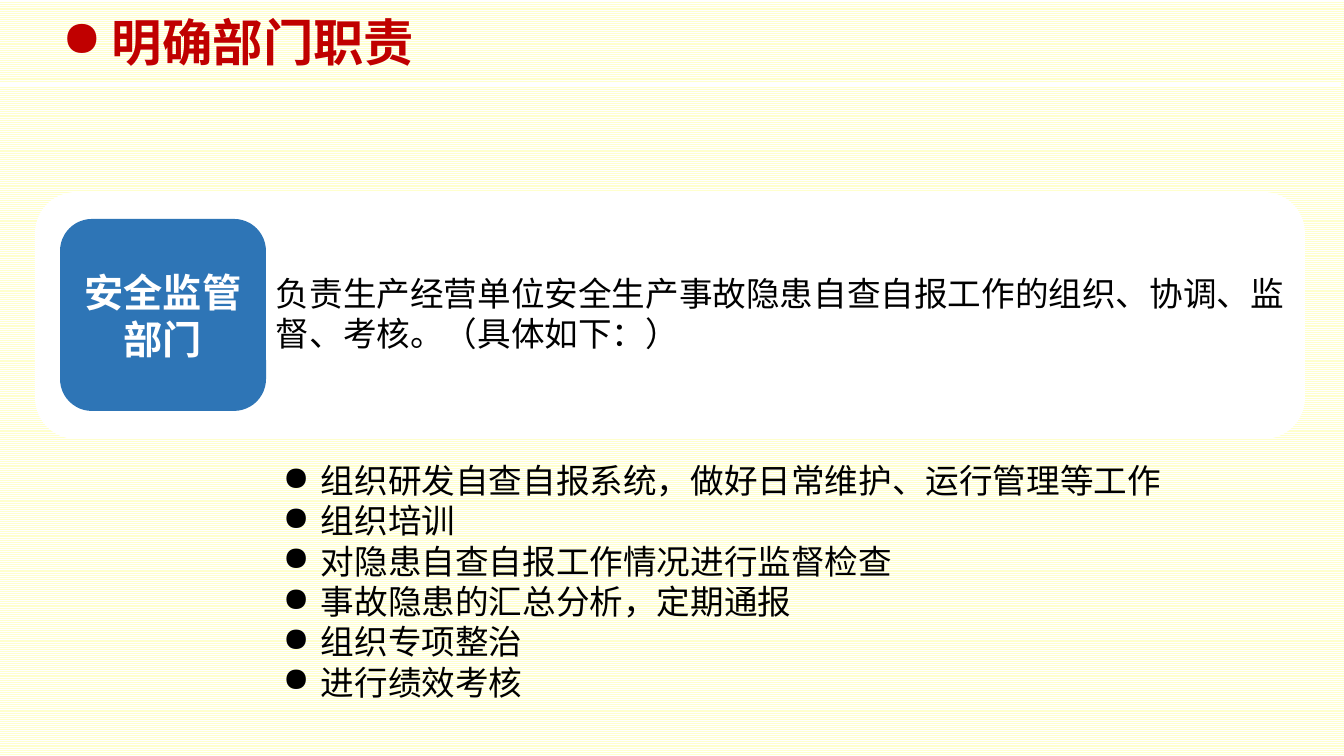
import pptx
import pptx.dml.color
import pptx.enum.dml
import pptx.enum.shapes
import pptx.enum.text
import pptx.oxml.ns
import pptx.util
from lxml import etree

PX = 914400 / 100.8
FONT = "Noto Sans CJK SC"
COLORS = {
    "stripe": "FFFFCC",
    "white": "FFFFFF",
    "heading": "C00000",
    "department": "2E75B6",
    "body": "000000",
}


def color(key):
    return pptx.dml.color.RGBColor.from_string(COLORS[key])


def write(shape, lines, size, color_key, bold=False, hang=0):
    """Fill a shape with paragraphs; a hang in px gives them round bullets."""
    frame = shape.text_frame
    frame.word_wrap = True
    frame.text = "\n".join(lines)
    for paragraph in frame.paragraphs:
        if hang:
            properties = paragraph._p.get_or_add_pPr()
            properties.set("marL", str(round(hang * PX)))
            properties.set("indent", str(round(-hang * PX)))
            bullet = etree.SubElement(properties, pptx.oxml.ns.qn("a:buChar"))
            bullet.set("char", "●")
        run = paragraph.runs[0]
        run.font.size = pptx.util.Pt(size)
        run.font.bold = bold
        run.font.color.rgb = color(color_key)
        run.font.name = FONT
        east_asian = etree.SubElement(run._r.rPr, pptx.oxml.ns.qn("a:ea"))
        east_asian.set("typeface", FONT)


presentation = pptx.Presentation()
presentation.slide_width = round(1344 * PX)
presentation.slide_height = round(756 * PX)
slide = presentation.slides.add_slide(presentation.slide_layouts[6])

background = slide.background.fill
background.patterned()
background.pattern = pptx.enum.dml.MSO_PATTERN.LIGHT_HORIZONTAL
background.fore_color.rgb = color("stripe")
background.back_color.rgb = color("white")

# Heading and the rule below it
heading = slide.shapes.add_textbox(*[round(v * PX) for v in (52, 6, 619, 72)])
write(heading, ["明确部门职责"], 36, "heading", bold=True, hang=50)

rule = slide.shapes.add_connector(
    pptx.enum.shapes.MSO_CONNECTOR.STRAIGHT,
    *[round(v * PX) for v in (0, 85, 1341, 85)])
rule.line.color.rgb = color("white")
rule.line.width = pptx.util.Pt(3)
etree.SubElement(rule._element.spPr, pptx.oxml.ns.qn("a:effectLst"))

# White panel with the department block on it
for box, fill in [((35, 192, 1270, 247), "white"),
                  ((60, 219, 206, 192), "department")]:
    department = slide.shapes.add_shape(
        pptx.enum.shapes.MSO_SHAPE.ROUNDED_RECTANGLE,
        *[round(v * PX) for v in box])
    department.shadow.inherit = False
    department.fill.solid()
    department.fill.fore_color.rgb = color(fill)
    department.line.fill.background()

write(department, ["安全监管部门"], 28, "white", bold=True)
department.text_frame.vertical_anchor = pptx.enum.text.MSO_ANCHOR.MIDDLE
department.text_frame.paragraphs[0].alignment = pptx.enum.text.PP_ALIGN.CENTER

# Duty and its details
duty = slide.shapes.add_textbox(*[round(v * PX) for v in (266, 268, 1039, 94)])
write(duty, ["负责生产经营单位安全生产事故隐患自查自报工作的组织、协调、监督、考核。（具体如下：）"],
      24, "body")

details = slide.shapes.add_textbox(*[round(v * PX) for v in (273, 455, 919, 255)])
write(details, [
    "组织研发自查自报系统，做好日常维护、运行管理等工作",
    "组织培训",
    "对隐患自查自报工作情况进行监督检查",
    "事故隐患的汇总分析，定期通报",
    "组织专项整治",
    "进行绩效考核",
], 24, "body", hang=38)

presentation.save("out.pptx")
